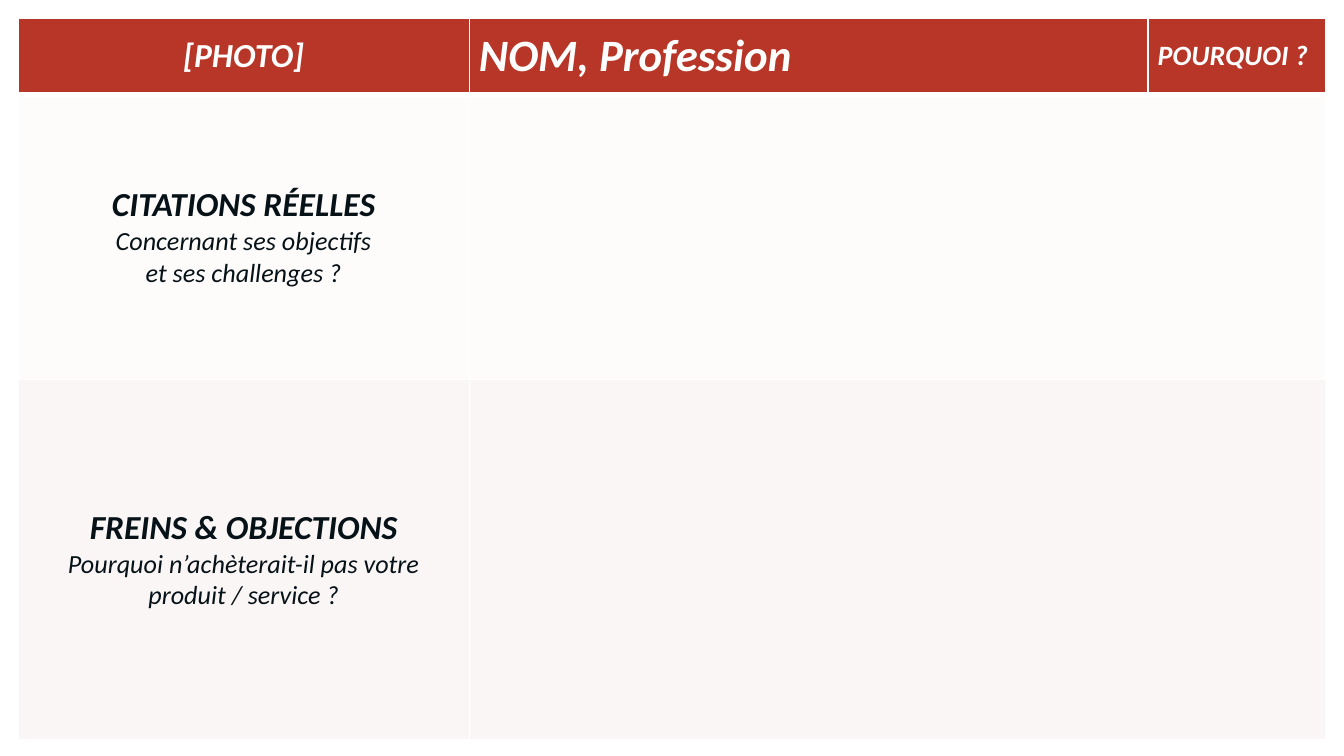
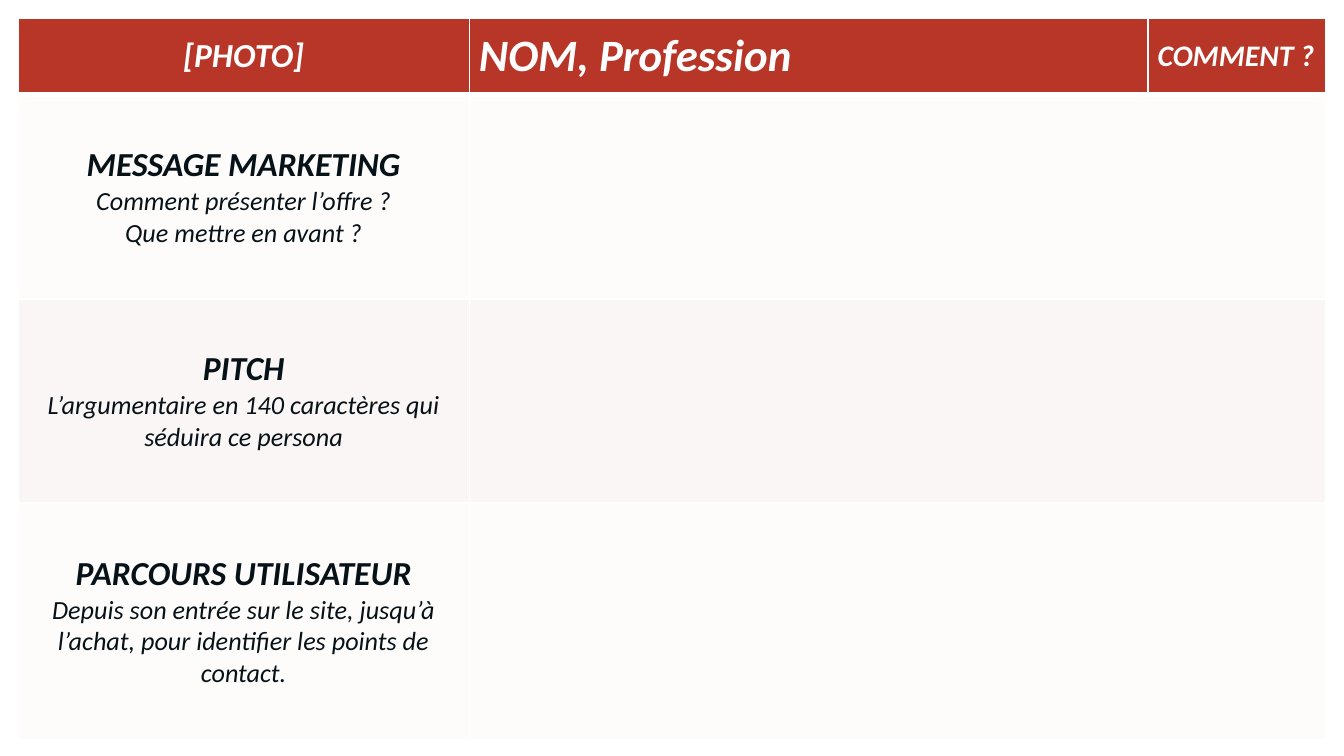
import dataclasses

import lxml.etree
import pptx
import pptx.dml.color
import pptx.enum.text
import pptx.oxml.ns
import pptx.util

Cm = pptx.util.Cm
Pt = pptx.util.Pt


@dataclasses.dataclass(frozen=True)
class Theme:
    font: str = "Calibri"
    header_fill: str = "B83627"
    row_fills: tuple = ("FDFCFA", "FAF6F5")
    light: str = "FFFFFF"
    dark: str = "071218"
    name_size: int = 24
    heading_size: int = 18
    hint_size: int = 14
    rule: float = 1
    header_rule: float = 3
    inset: float = 0.18


class PersonaDeck:
    edge = 0.34
    columns = (8.53, 12.83, 3.35)
    header_height = 1.45

    def __init__(self, theme):
        self.theme = theme
        self.deck = pptx.Presentation()
        self.deck.slide_width = Cm(25.4)
        self.deck.slide_height = Cm(14.29)
        self.slide = None

    def add_slide(self):
        self.slide = self.deck.slides.add_slide(self.deck.slide_layouts[6])

    def style_cell(self, cell, fill, bottom_rule):
        properties = cell._tc.get_or_add_tcPr()
        for side in "LRTB":
            width = bottom_rule if side == "B" else self.theme.rule
            border = lxml.etree.SubElement(
                properties, pptx.oxml.ns.qn(f"a:ln{side}"), w=str(int(Pt(width))))
            paint = lxml.etree.SubElement(border, pptx.oxml.ns.qn("a:solidFill"))
            lxml.etree.SubElement(paint, pptx.oxml.ns.qn("a:srgbClr"), val=self.theme.light)
        cell.fill.solid()
        cell.fill.fore_color.rgb = pptx.dml.color.RGBColor.from_string(fill)
        cell.vertical_anchor = pptx.enum.text.MSO_ANCHOR.MIDDLE
        cell.margin_left = cell.margin_right = Cm(self.theme.inset)
        cell.margin_top = cell.margin_bottom = Cm(self.theme.inset)

    def set_words(self, paragraph, words, size, colour, bold=True, centred=True):
        paragraph.text = words
        if centred:
            paragraph.alignment = pptx.enum.text.PP_ALIGN.CENTER
        for run in paragraph.runs:
            run.font.name = self.theme.font
            run.font.size = Pt(size)
            run.font.bold = bold
            run.font.italic = True
            run.font.color.rgb = pptx.dml.color.RGBColor.from_string(colour)

    def add_header(self, table, question, question_size):
        theme = self.theme
        labels = (
            ("[PHOTO]", theme.heading_size, True),
            ("NOM, Profession", theme.name_size, False),
            (question, question_size, False),
        )
        for cell, (words, size, centred) in zip(table.rows[0].cells, labels):
            self.style_cell(cell, theme.header_fill, theme.header_rule)
            self.set_words(cell.text_frame.paragraphs[0], words, size, theme.light,
                           centred=centred)

    def add_topic(self, table, row, heading, hint):
        theme = self.theme
        table.cell(row, 1).merge(table.cell(row, 2))
        for cell in table.rows[row].cells:
            self.style_cell(cell, theme.row_fills[(row - 1) % 2], theme.rule)
        frame = table.cell(row, 0).text_frame
        self.set_words(frame.paragraphs[0], heading, theme.heading_size, theme.dark)
        self.set_words(frame.add_paragraph(), hint, theme.hint_size, theme.dark, bold=False)

    def add_persona_table(self, question, question_size, topics):
        heights = (self.header_height, *(height for height, _, _ in topics))
        table = self.slide.shapes.add_table(
            len(heights), len(self.columns), Cm(self.edge), Cm(self.edge),
            Cm(sum(self.columns)), Cm(sum(heights))).table
        table.horz_banding = False
        for column, width in zip(table.columns, self.columns):
            column.width = Cm(width)
        for row, height in zip(table.rows, heights):
            row.height = Cm(height)
        self.add_header(table, question, question_size)
        for row, (_, heading, hint) in enumerate(topics, 1):
            self.add_topic(table, row, heading, hint)


def main():
    persona = PersonaDeck(Theme())
    pages = (
        ("POURQUOI ?", 15, (
            (5.38, "CITATIONS RÉELLES", "Concernant ses objectifs\vet ses challenges ?"),
            (6.81, "FREINS & OBJECTIONS",
             "Pourquoi n’achèterait-il pas votre produit / service ?"),
        )),
        ("COMMENT ?", 16, (
            (3.86, "MESSAGE MARKETING", "Comment présenter l’offre ?\vQue mettre en avant ?"),
            (3.86, "PITCH", "L’argumentaire en 140 caractères qui séduira ce persona"),
            (4.47, "PARCOURS UTILISATEUR",
             "Depuis son entrée sur le site, jusqu’à l’achat, "
             "pour identifier les points de contact."),
        )),
    )
    for question, question_size, topics in pages:
        persona.add_slide()
        persona.add_persona_table(question, question_size, topics)
    persona.deck.save("out.pptx")


if __name__ == "__main__":
    main()
